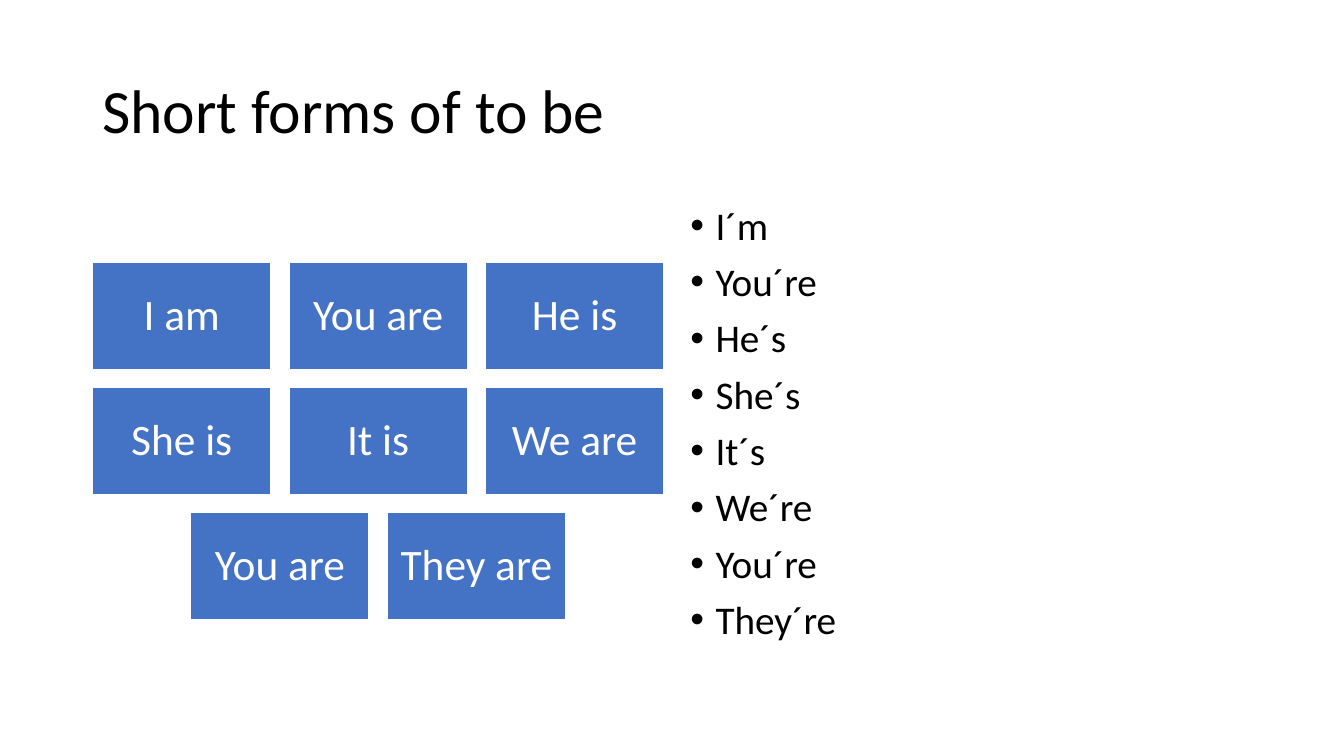
from lxml import etree
from pptx import Presentation
from pptx.dml.color import RGBColor
from pptx.enum.shapes import MSO_SHAPE as SHAPE
from pptx.enum.text import MSO_ANCHOR as ANCHOR, PP_ALIGN as ALIGN
from pptx.oxml.ns import qn
from pptx.util import Cm, Pt

COLORS = {"text": "000000", "tile": "4472C4", "white": "FFFFFF"}
FONT = "Calibri"
LONG_FORMS = ["I am", "You are", "He is", "She is", "It is", "We are",
              "You are", "They are"]
SHORT_FORMS = ["I´m", "You´re", "He´s", "She´s", "It´s", "We´re",
               "You´re", "They´re"]


def rgb(name):
    return RGBColor.from_string(COLORS[name])


def style(p, size, color):
    p.line_spacing = 0.9
    for r in p.runs:
        r.font.name = FONT
        r.font.size = Pt(size)
        r.font.color.rgb = rgb(color)


def add_text_frame(s, x, y, w, h):
    tf = s.shapes.add_textbox(Cm(x), Cm(y), Cm(w), Cm(h)).text_frame
    tf.word_wrap = True
    return tf


def add_title(s, text, x, y, w, h):
    tf = add_text_frame(s, x, y, w, h)
    tf.vertical_anchor = ANCHOR.MIDDLE
    tf.text = text
    style(tf.paragraphs[0], 44, "text")


def add_tile(s, text, x, y, w, h):
    sp = s.shapes.add_shape(SHAPE.RECTANGLE, Cm(x), Cm(y), Cm(w), Cm(h))
    sp.shadow.inherit = False
    sp.fill.solid()
    sp.fill.fore_color.rgb = rgb("tile")
    sp.line.color.rgb = rgb("white")
    sp.line.width = Pt(1)
    tf = sp.text_frame
    tf.word_wrap = True
    tf.vertical_anchor = ANCHOR.MIDDLE
    tf.margin_left = tf.margin_right = Cm(0.3)
    tf.margin_top = tf.margin_bottom = Cm(0.3)
    tf.text = text
    p = tf.paragraphs[0]
    p.alignment = ALIGN.CENTER
    style(p, 31, "white")


def add_tile_grid(s, texts, x, y, w, h, cols=3):
    """Fill the box with rows of tiles, each row centred, gaps a tenth of a tile."""
    rows = [texts[i:i + cols] for i in range(0, len(texts), cols)]
    tile_w = w / (cols + 0.1 * (cols - 1))
    tile_h = 0.6 * tile_w
    gap = 0.1 * tile_w
    top = y + (h - len(rows) * (tile_h + gap) + gap) / 2
    for i, row in enumerate(rows):
        left = x + (w - len(row) * (tile_w + gap) + gap) / 2
        for j, text in enumerate(row):
            add_tile(s, text, left + j * (tile_w + gap),
                     top + i * (tile_h + gap), tile_w, tile_h)


def add_bullet_list(s, items, x, y, w, h):
    tf = add_text_frame(s, x, y, w, h)
    tf.text = "\n".join(items)
    for p in tf.paragraphs:
        style(p, 28, "text")
        p.space_before = Pt(10)
        pPr = p._p.get_or_add_pPr()
        pPr.set("marL", str(Cm(0.635)))
        pPr.set("indent", str(-Cm(0.635)))
        etree.SubElement(pPr, qn("a:buFont")).set("typeface", "Arial")
        etree.SubElement(pPr, qn("a:buChar")).set("char", "•")


def main():
    prs = Presentation()
    prs.slide_width, prs.slide_height = Cm(33.87), Cm(19.05)
    s = prs.slides.add_slide(prs.slide_layouts[6])
    add_title(s, "Short forms of to be", 2.33, 1.01, 29.21, 3.68)
    add_tile_grid(s, LONG_FORMS, 2.33, 5.07, 14.4, 12.09)
    add_bullet_list(s, SHORT_FORMS, 17.15, 5.07, 14.4, 12.09)
    prs.save("out.pptx")


if __name__ == "__main__":
    main()
